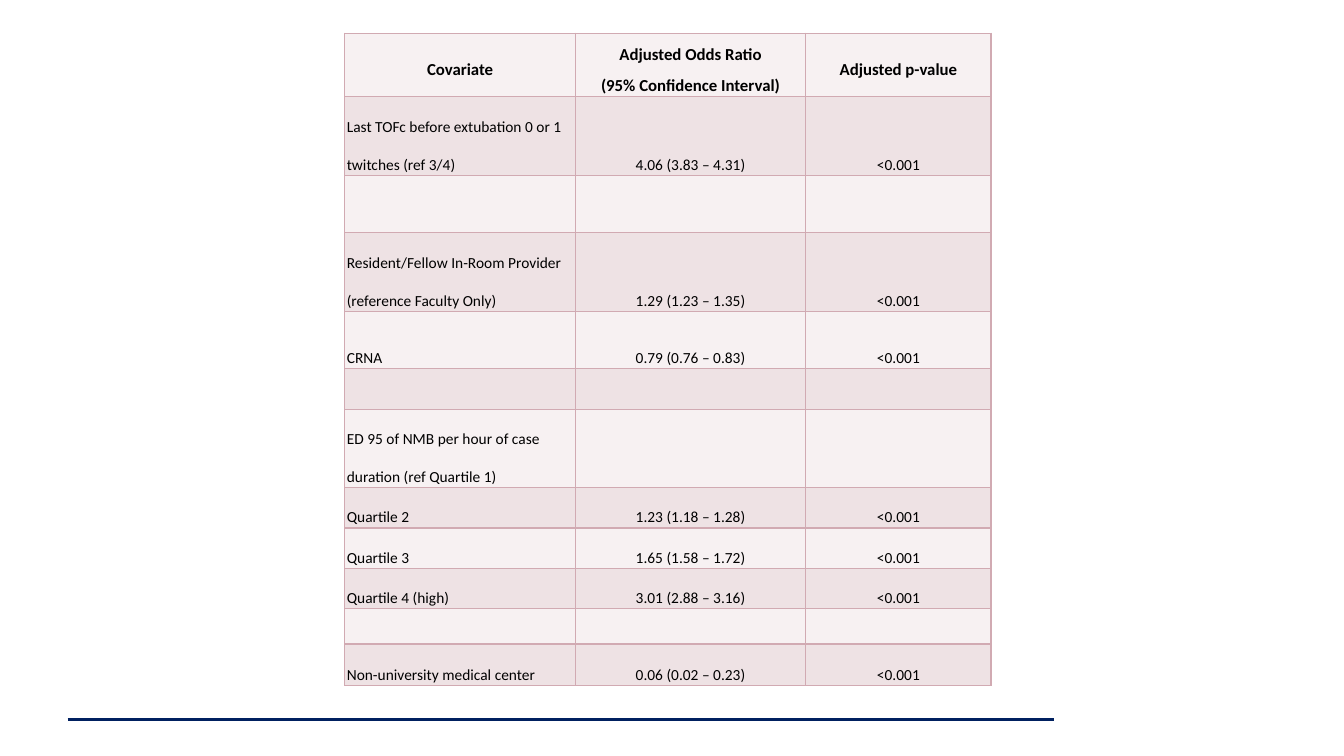
from lxml import etree
from pptx import Presentation
from pptx.dml.color import RGBColor
from pptx.enum.shapes import MSO_CONNECTOR
from pptx.enum.text import MSO_ANCHOR, PP_ALIGN
from pptx.oxml.ns import qn
from pptx.util import Inches, Pt

STRAIGHT = MSO_CONNECTOR.STRAIGHT
MIDDLE, BOTTOM = MSO_ANCHOR.MIDDLE, MSO_ANCHOR.BOTTOM
LEFT, CENTER = PP_ALIGN.LEFT, PP_ALIGN.CENTER

COLORS = {"light": "F7F1F2", "band": "EEE2E4", "border": "D1AAB2",
          "text": "000000", "rule": "002060"}
FONT = "Calibri"

HEADER = ("Covariate", "Adjusted Odds Ratio\n(95% Confidence Interval)", "Adjusted p-value")
P_VALUE = "<0.001"
BLANK = ("", "", "")
ROWS = [
    HEADER,
    ("Last TOFc before extubation 0 or 1 twitches (ref 3/4)", "4.06 (3.83 – 4.31)", P_VALUE),
    BLANK,
    ("Resident/Fellow In-Room Provider (reference Faculty Only)", "1.29 (1.23 – 1.35)", P_VALUE),
    ("CRNA", "0.79 (0.76 – 0.83)", P_VALUE),
    BLANK,
    ("ED 95 of NMB per hour of case duration (ref Quartile 1)", "", ""),
    ("Quartile 2", "1.23 (1.18 – 1.28)", P_VALUE),
    ("Quartile 3", "1.65 (1.58 – 1.72)", P_VALUE),
    ("Quartile 4 (high)", "3.01 (2.88 – 3.16)", P_VALUE),
    BLANK,
    ("Non-university medical center", "0.06 (0.02 – 0.23)", P_VALUE),
]
COLUMN_SHARES = (2.29, 2.29, 1.84)
ROW_SHARES = (0.63, 0.78, 0.57, 0.78, 0.57, 0.4, 0.78, 0.4, 0.4, 0.4, 0.35, 0.41)


def color(name):
    return RGBColor.from_string(COLORS[name])


def add_borders(cell):
    properties = cell._tc.get_or_add_tcPr()
    for side in ("a:lnL", "a:lnR", "a:lnT", "a:lnB"):
        line = etree.SubElement(properties, qn(side), w=str(Pt(1)))
        fill = etree.SubElement(line, qn("a:solidFill"))
        etree.SubElement(fill, qn("a:srgbClr"), val=COLORS["border"])


def fill_cell(cell, text, row, column):
    add_borders(cell)
    cell.fill.solid()
    cell.fill.fore_color.rgb = color("band" if row % 2 else "light")
    cell.margin_left = cell.margin_right = Inches(0.02)
    cell.margin_top = cell.margin_bottom = Inches(0.01)
    is_header = row == 0
    cell.vertical_anchor = MIDDLE if is_header else BOTTOM
    if not text:
        return
    for index, words in enumerate(text.split("\n")):
        frame = cell.text_frame
        paragraph = frame.add_paragraph() if index else frame.paragraphs[0]
        paragraph.alignment = CENTER if is_header or column else LEFT
        paragraph.line_spacing = 1.5 if is_header else 2.0
        run = paragraph.add_run()
        run.text = words
        run.font.name = FONT
        run.font.size = Pt(12 if is_header else 11)
        run.font.bold = is_header
        run.font.color.rgb = color("text")


def add_covariate_table(slide, left, top, width, height):
    table = slide.shapes.add_table(len(ROWS), len(HEADER), left, top, width, height).table
    table.first_row = table.horz_banding = False
    for column, share in zip(table.columns, COLUMN_SHARES):
        column.width = int(width * share / sum(COLUMN_SHARES))
    for row, share in zip(table.rows, ROW_SHARES):
        row.height = int(height * share / sum(ROW_SHARES))
    for row, texts in enumerate(ROWS):
        for column, text in enumerate(texts):
            fill_cell(table.cell(row, column), text, row, column)


def add_footer_rule(slide, left, top, width):
    rule = slide.shapes.add_connector(STRAIGHT, left, top, left + width, top)
    rule.line.color.rgb = color("rule")
    rule.line.width = Pt(2)
    etree.SubElement(rule._element.spPr, qn("a:effectLst"))


def main():
    presentation = Presentation()
    presentation.slide_width, presentation.slide_height = Inches(13.33), Inches(7.5)
    slide = presentation.slides.add_slide(presentation.slide_layouts[6])
    # Footer rule
    add_footer_rule(slide, Inches(0.67), Inches(7.14), Inches(9.78))
    # Table of adjusted odds ratios
    add_covariate_table(slide, Inches(3.42), Inches(0.33), Inches(6.41), Inches(6.47))
    presentation.save("out.pptx")


if __name__ == "__main__":
    main()
